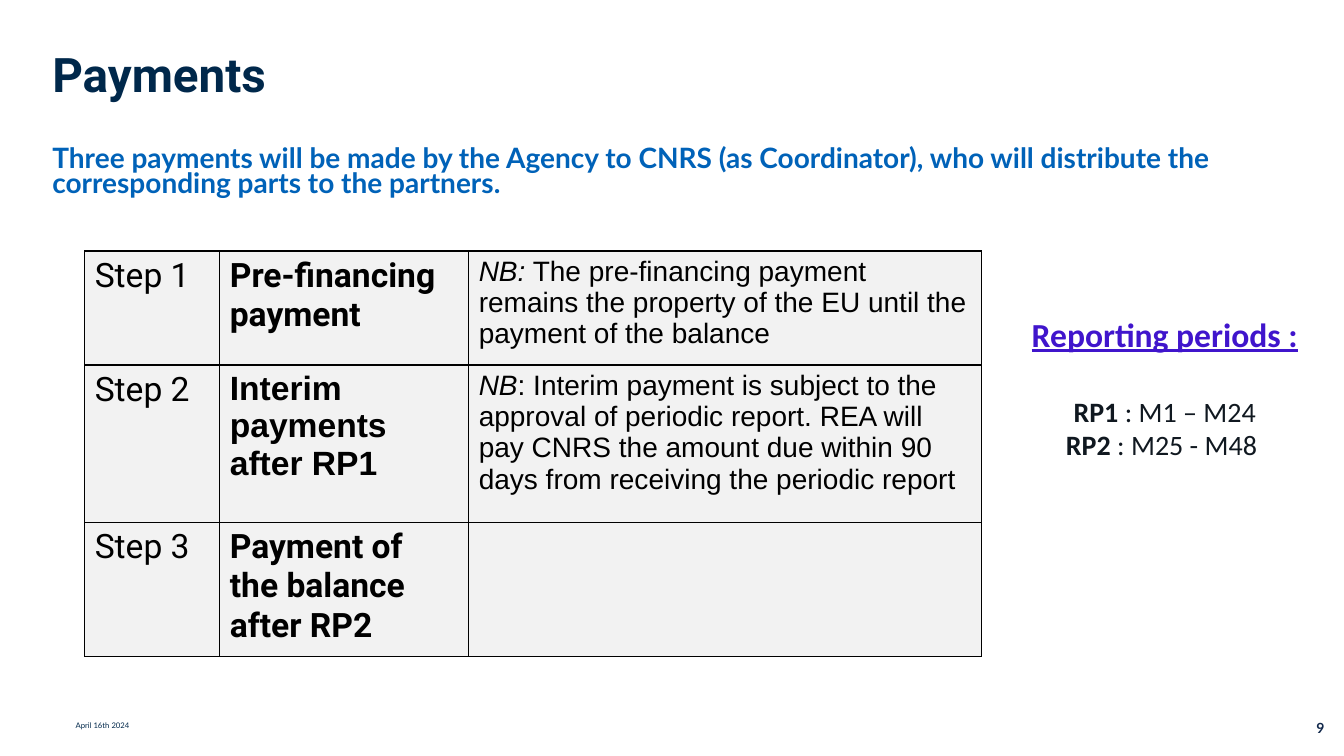
from lxml import etree
from pptx import Presentation
from pptx.dml.color import RGBColor
from pptx.enum.text import MSO_ANCHOR, MSO_AUTO_SIZE, PP_ALIGN
from pptx.oxml.ns import qn
from pptx.util import Pt

LEFT, CENTER, RIGHT = PP_ALIGN.LEFT, PP_ALIGN.CENTER, PP_ALIGN.RIGHT
TOP, MIDDLE = MSO_ANCHOR.TOP, MSO_ANCHOR.MIDDLE
NO_AUTOFIT = MSO_AUTO_SIZE.NONE
TITLE_ONLY = 5

NAVY = RGBColor(0x00, 0x28, 0x4B)
BLUE = RGBColor(0x00, 0x62, 0xB8)
SLATE = RGBColor(0x11, 0x28, 0x4B)
VIOLET = RGBColor(0x40, 0x15, 0xCC)
INK = RGBColor(0x10, 0x18, 0x20)
BLACK = RGBColor(0x00, 0x00, 0x00)
CELL_GREY = RGBColor(0xF2, 0xF2, 0xF2)

COLUMN_WIDTHS = (96.5, 177.8, 366.5)
ROW_HEIGHTS = (81.4, 112.3, 95.8)
# Step, payment, font of the payment, note label, note
STEPS = (
    ("Step 1", "Pre-financing payment", "Roboto", "NB:",
     " The pre-financing payment remains the property of the EU until "
     "the payment of the balance"),
    ("Step 2", "Interim payments after RP1", "Arial", "NB",
     ": Interim payment is subject to the approval of periodic report. "
     "REA will pay CNRS the amount due within 90 days from receiving "
     "the periodic report"),
    ("Step 3", "Payment of the balance after RP2", "Roboto", "", ""),
)
PERIODS = (("RP1", " : M1 – M24"), ("RP2 ", ": M25 - M48 "))


def add_span(para, text, size, font, color, bold=False, italic=False,
             underline=False):
    span = para.add_run()
    span.text = text
    span.font.size = Pt(size)
    span.font.name = font
    span.font.color.rgb = color
    span.font.bold = bold
    span.font.italic = italic
    span.font.underline = underline


def set_frame(frame, margins, anchor=TOP):
    frame.word_wrap = True
    frame.auto_size = NO_AUTOFIT
    frame.vertical_anchor = anchor
    (frame.margin_left, frame.margin_top,
     frame.margin_right, frame.margin_bottom) = map(Pt, margins)


def add_box(slide, left, top, width, height, margins=(0, 0, 0, 0),
            anchor=TOP):
    box = slide.shapes.add_textbox(Pt(left), Pt(top), Pt(width), Pt(height))
    set_frame(box.text_frame, margins, anchor)
    return box.text_frame


def add_line_text(frame, text, size, font, color, bold, align=LEFT,
                  spacing=None):
    para = frame.paragraphs[0]
    para.alignment = align
    para.line_spacing = spacing
    add_span(para, text, size, font, color, bold)


def set_title(slide):
    title = slide.shapes.title
    title.left, title.top = Pt(37.4), Pt(37.4)
    title.width, title.height = Pt(884.2), Pt(85)
    set_frame(title.text_frame, (0, 0, 28, 0))
    add_line_text(title.text_frame, "Payments", 34, "Roboto", NAVY, True,
                  spacing=Pt(35.8))


def style_cell(cell):
    properties = cell._tc.get_or_add_tcPr()
    for side in ("a:lnL", "a:lnR", "a:lnT", "a:lnB"):
        line = etree.SubElement(properties, qn(side), w=str(Pt(1)))
        fill = etree.SubElement(line, qn("a:solidFill"))
        etree.SubElement(fill, qn("a:srgbClr"), val=str(BLACK))
    cell.fill.solid()
    cell.fill.fore_color.rgb = CELL_GREY


def add_steps_table(slide):
    table = slide.shapes.add_table(
        len(STEPS), len(COLUMN_WIDTHS), Pt(60.5), Pt(179.3),
        Pt(sum(COLUMN_WIDTHS)), Pt(sum(ROW_HEIGHTS))).table
    table.first_row = table.horz_banding = False
    for column, width in zip(table.columns, COLUMN_WIDTHS):
        column.width = Pt(width)
    for row, height, step in zip(table.rows, ROW_HEIGHTS, STEPS):
        row.height = Pt(height)
        for cell in row.cells:
            style_cell(cell)
        name, payment, payment_font, label, note = step
        name_para, payment_para, note_para = (
            cell.text_frame.paragraphs[0] for cell in row.cells)
        add_span(name_para, name, 24, "Roboto", BLACK)
        add_span(payment_para, payment, 24, payment_font, BLACK, bold=True)
        if note:
            add_span(note_para, label, 20, "Arial", BLACK, italic=True)
            add_span(note_para, note, 20, "Arial", BLACK)


def add_reporting_periods(slide):
    frame = add_box(slide, 719.3, 220.3, 225.4, 113.8, (7.2, 3.6, 7.2, 3.6))
    heading = frame.paragraphs[0]
    heading.alignment = CENTER
    add_span(heading, "Reporting periods :", 24, "Calibri", VIOLET,
             bold=True, underline=True)
    heading.space_after = Pt(29)
    for period, months in PERIODS:
        para = frame.add_paragraph()
        para.alignment = CENTER
        add_span(para, period, 20, "Calibri", INK, bold=True)
        add_span(para, months, 20, "Calibri", INK)


def main():
    deck = Presentation()
    deck.slide_width, deck.slide_height = Pt(960), Pt(540)
    page = deck.slides.add_slide(deck.slide_layouts[TITLE_ONLY])

    # Title and introduction
    set_title(page)
    intro = add_box(page, 37.4, 106.6, 884.2, 36.7, (0, 0, 28, 0))
    add_line_text(
        intro, "Three payments will be made by the Agency to CNRS (as "
        "Coordinator), who will distribute the corresponding parts to the "
        "partners.", 20, "Lato", BLUE, True, spacing=Pt(17.8))

    # Payment steps and reporting periods
    add_steps_table(page)
    add_reporting_periods(page)

    # Footer
    date = add_box(page, 54, 515.5, 153.4, 6.5)
    add_line_text(date, "April 16th 2024", 5.5, "Lato", NAVY, False,
                  spacing=0.9)
    number = add_box(page, 871.2, 504, 74.9, 31.7, anchor=MIDDLE)
    add_line_text(number, "9", 10, "Lato", SLATE, True, RIGHT)

    deck.save("out.pptx")


if __name__ == "__main__":
    main()
